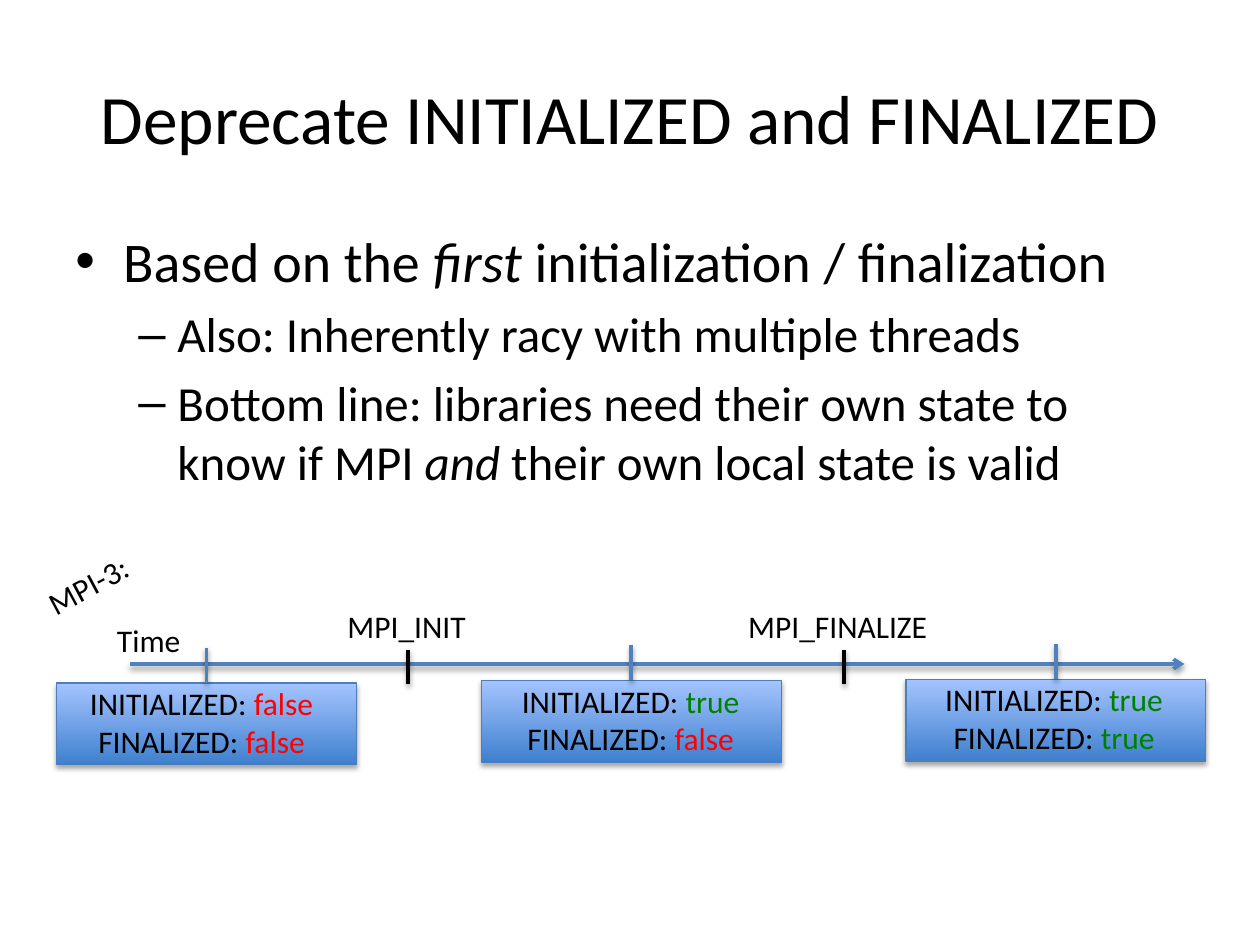
from lxml.etree import SubElement
from pptx import Presentation
from pptx.dml.color import RGBColor
from pptx.enum.shapes import MSO_CONNECTOR, MSO_SHAPE
from pptx.enum.text import MSO_ANCHOR, MSO_AUTO_SIZE, PP_ALIGN
from pptx.oxml.ns import qn
from pptx.util import Inches, Pt

BLACK, BLUE, RED, GREEN = "000000", "4F81BD", "FF0000", "008000"
STATE_COLORS = {"false": RED, "true": GREEN}


def rgb(value):
    return RGBColor.from_string(value)


class Deck:
    font = "Calibri"
    label_size = 18
    line_width = 2

    def __init__(self, width, height):
        self.prs = Presentation()
        self.prs.slide_width = Inches(width)
        self.prs.slide_height = Inches(height)
        self.s = self.prs.slides.add_slide(self.prs.slide_layouts[6])
        self.shapes = self.s.shapes

    def runs(self, p, parts, size):
        for text, fmt in parts:
            r = p.add_run()
            r.text = text
            style = {"name": self.font, "size": Pt(size), **fmt}
            color = style.pop("color", BLACK)
            for name, value in style.items():
                setattr(r.font, name, value)
            r.font.color.rgb = rgb(color)

    def text(self, box, lines, size=label_size, align=PP_ALIGN.LEFT, rotation=0, **frame):
        sp = self.shapes.add_textbox(*map(Inches, box))
        sp.rotation = rotation
        tf = sp.text_frame
        options = {"word_wrap": False, "auto_size": MSO_AUTO_SIZE.SHAPE_TO_FIT_TEXT, **frame}
        for name, value in options.items():
            setattr(tf, name, value)
        for i, parts in enumerate(lines):
            p = tf.paragraphs[0] if i == 0 else tf.add_paragraph()
            p.alignment = align
            self.runs(p, parts, size)
        return tf

    def bullets(self, box, items):
        tf = self.text(box, [], word_wrap=True, auto_size=MSO_AUTO_SIZE.NONE)
        levels = [("•", 0.38, 0.38, 32), ("–", 0.81, 0.31, 28)]
        for i, (level, parts) in enumerate(items):
            char, margin, hanging, size = levels[level]
            p = tf.paragraphs[0] if i == 0 else tf.add_paragraph()
            p.level = level
            p.space_before = Pt(size * 0.2)
            pPr = p._p.get_or_add_pPr()
            pPr.set("marL", str(Inches(margin)))
            pPr.set("indent", str(-Inches(hanging)))
            SubElement(pPr, qn("a:buFont"), typeface="Arial")
            SubElement(pPr, qn("a:buChar"), char=char)
            self.runs(p, parts, size)

    def shadow(self, sp, distance, opacity):
        effects = SubElement(sp._element.spPr, qn("a:effectLst"))
        outer = SubElement(effects, qn("a:outerShdw"), blurRad=str(Pt(3.1)),
                           dist=str(Pt(distance)), dir="5400000", rotWithShape="0")
        color = SubElement(outer, qn("a:srgbClr"), val=BLACK)
        SubElement(color, qn("a:alpha"), val=str(opacity * 1000))

    def line(self, x1, y1, x2, y2, color, arrow=False):
        sp = self.shapes.add_connector(MSO_CONNECTOR.STRAIGHT, *map(Inches, (x1, y1, x2, y2)))
        sp.line.color.rgb = rgb(color)
        sp.line.width = Pt(self.line_width)
        if arrow:
            SubElement(sp.line._get_or_add_ln(), qn("a:tailEnd"), type="arrow")
        self.shadow(sp, 1.6, 38)

    def panel(self, box):
        sp = self.shapes.add_shape(MSO_SHAPE.RECTANGLE, *map(Inches, box))
        sp.fill.gradient()
        sp.fill.gradient_angle = 90
        for stop, color in zip(sp.fill.gradient_stops, ("3F80CE", "A4C4FF")):
            stop.color.rgb = rgb(color)
        sp.line.color.rgb = rgb("4B7EBC")
        sp.line.width = Pt(0.75)
        self.shadow(sp, 1.8, 35)

    def state(self, x, y, text_x, text_width, initialized, finalized):
        self.shapes = self.s.shapes.add_group_shape().shapes
        self.panel((x, y, 2.38, 0.65))
        values = [("INITIALIZED: ", initialized), ("FINALIZED: ", finalized)]
        lines = [[(name, {}), (value, {"color": STATE_COLORS[value]})] for name, value in values]
        self.text((text_x, y - 0.04, text_width, 0.71), lines, align=PP_ALIGN.CENTER)
        self.line(x + 1.19, y - 0.28, x + 1.19, y, BLUE)
        self.shapes = self.s.shapes


def main():
    deck = Deck(10, 7.5)
    italic = {"italic": True}
    deck.text((0.5, 0.3, 9, 1.25), [[("Deprecate INITIALIZED and FINALIZED", {})]],
              size=39.6, align=PP_ALIGN.CENTER, word_wrap=True,
              auto_size=MSO_AUTO_SIZE.NONE, vertical_anchor=MSO_ANCHOR.MIDDLE)
    deck.bullets((0.5, 1.75, 9, 4.95), [
        (0, [("Based on the ", {}), ("first", italic), (" initialization / finalization", {})]),
        (1, [("Also: Inherently racy with multiple threads", {})]),
        (1, [("Bottom line: libraries need their own state to know if MPI ", {}),
             ("and", italic), (" their own local state is valid", {})]),
    ])

    deck.line(1.03, 5.27, 9.4, 5.27, BLUE, arrow=True)
    for x, left, width, call in [(3.24, 2.66, 1.16, "MPI_INIT"),
                                 (6.7, 5.84, 1.64, "MPI_FINALIZE")]:
        deck.line(x, 5.16, x, 5.43, BLACK)
        deck.text((left, 4.77, width, 0.4), [[(call, {})]])
    deck.text((0.26, 4.44, 0.88, 0.4), [[("MPI-3:", {})]], rotation=331.7)

    states = [(5.42, 0.58, 2.04, "false", "false"),
              (5.4, 4.03, 1.95, "true", "false"),
              (5.39, 7.37, 1.99, "true", "true")]
    for i, state in enumerate(states):
        deck.state(0.45 + 3.37 * i, *state)
    deck.text((0.83, 4.88, 0.71, 0.4), [[("Time", {})]])
    deck.prs.save("out.pptx")


if __name__ == "__main__":
    main()
